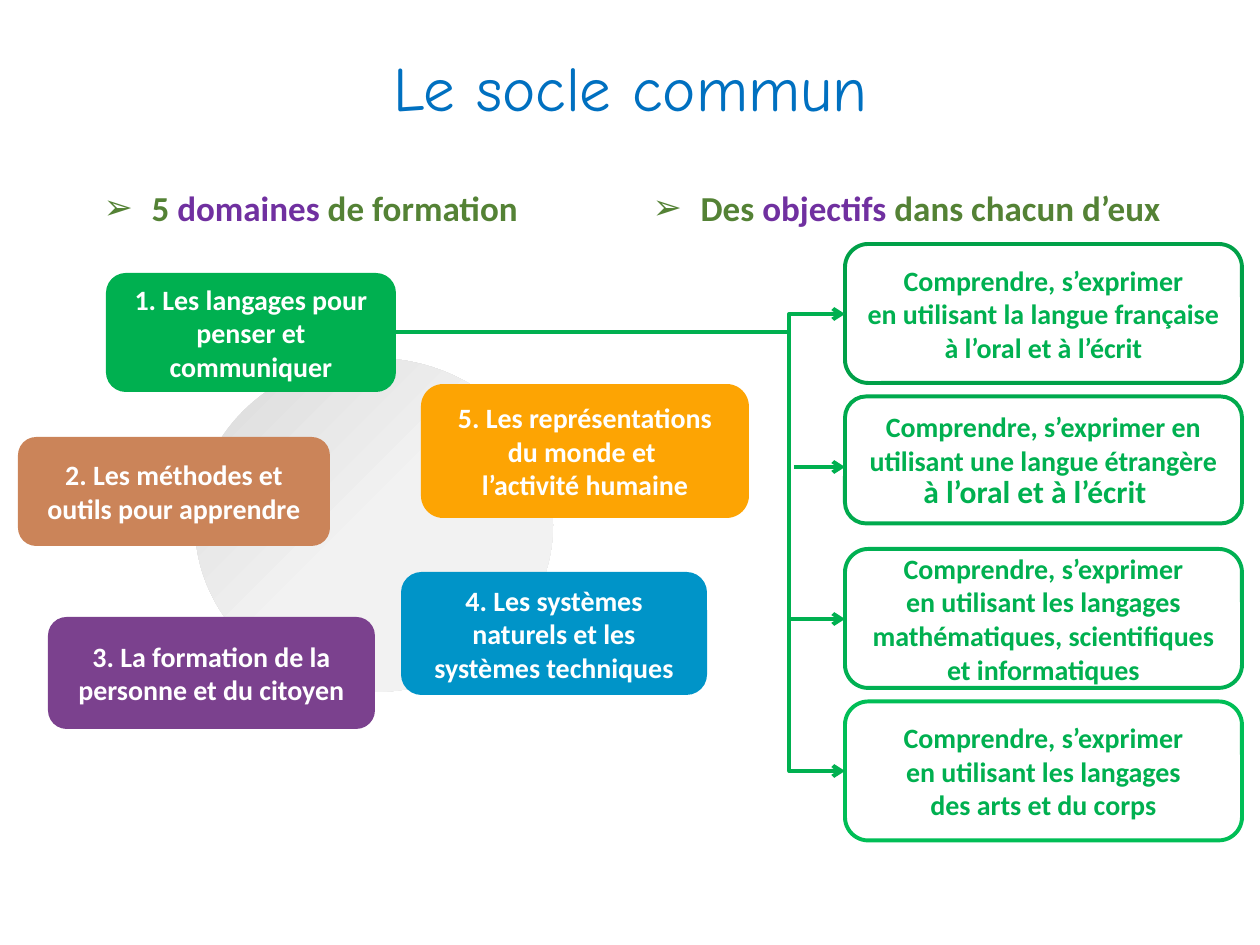
from lxml import etree
from pptx import Presentation
from pptx.dml.color import RGBColor
from pptx.enum.shapes import MSO_CONNECTOR, MSO_SHAPE
from pptx.enum.text import MSO_ANCHOR, PP_ALIGN
from pptx.oxml import parse_xml
from pptx.oxml.ns import nsdecls, qn
from pptx.util import Emu, Pt

OVAL, ROUNDED = MSO_SHAPE.OVAL, MSO_SHAPE.ROUNDED_RECTANGLE
STRAIGHT, ELBOW = MSO_CONNECTOR.STRAIGHT, MSO_CONNECTOR.ELBOW
CENTER, MIDDLE, TOP = PP_ALIGN.CENTER, MSO_ANCHOR.MIDDLE, MSO_ANCHOR.TOP

PX_PER_INCH = 126
GREEN, OLIVE, PURPLE, WHITE = "00B050", "548235", "7030A0", "FFFFFF"

# Left, top, width, height, fill, text
DOMAINS = [
    (401, 572, 306, 123, "0094C8", "4. Les systèmes naturels et les systèmes techniques"),
    (48, 617, 327, 112, "7B418E", "3. La formation de la personne et du citoyen"),
    (18, 437, 312, 109, "CB8459", "2. Les méthodes et outils pour apprendre"),
    (421, 384, 328, 134, "FDA403", "5. Les représentations du monde et \nl’activité humaine"),
    (106, 273, 290, 119, GREEN, "1. Les langages pour penser et communiquer"),
]

# Height, line colour, bottom inset, text
GOALS = [
    (139, "00A048", 6, "Comprendre, s’exprimer\nen utilisant la langue française à l’oral et à l’écrit"),
    (127, "00AA4D", 40, "Comprendre, s’exprimer en utilisant une langue étrangère"),
    (139, "00B052", 6, "Comprendre, s’exprimer\nen utilisant les langages mathématiques, scientifiques "
                       "et informatiques"),
    (139, "00BE56", 6, "Comprendre, s’exprimer\nen utilisant les langages\ndes arts et du corps"),
]
GOAL_LEFT, GOAL_TOP, GOAL_WIDTH, GOAL_PITCH = 845, 244, 397, 152.5

# Left, width, coloured runs
HEADINGS = [
    (91, 544, [("5 ", OLIVE), ("domaines", PURPLE), (" de formation", OLIVE)]),
    (640, 621, [("Des ", OLIVE), ("objectifs", PURPLE), (" dans chacun d’eux", OLIVE)]),
]


def px(n):
    return Emu(round(n * 914400 / PX_PER_INCH))


def rgb(value):
    return RGBColor.from_string(value)


def place(sp, left, top, width, height):
    sp.left, sp.top, sp.width, sp.height = px(left), px(top), px(width), px(height)


def add_run(p, text, size, color, bold=True, font="Calibri"):
    r = p.add_run()
    r.text = text
    r.font.name, r.font.size, r.font.bold = font, Pt(size), bold
    r.font.color.rgb = rgb(color)


def add_title(slide, text):
    sp = slide.shapes.title
    place(sp, 0, 0, 1261, 183)
    sp.text_frame.vertical_anchor = MIDDLE
    p = sp.text_frame.paragraphs[0]
    p.alignment, p.line_spacing = CENTER, 0.9
    add_run(p, text, 36, "0070C0", False, "Comic Neue")


def add_heading(sp, left, width, runs):
    place(sp, left, 180, width, 55)
    sp.text_frame.vertical_anchor = TOP
    p = sp.text_frame.paragraphs[0]
    p.space_before = Pt(0)
    pPr = p._p.get_or_add_pPr()
    pPr.set("marL", str(px(48)))
    pPr.set("indent", str(-px(48)))
    etree.SubElement(pPr, qn("a:buChar")).set("char", "➢")
    for text, color in runs:
        add_run(p, text, 20, color)


def add_disc(slide):
    sp = slide.shapes.add_shape(OVAL, px(195), px(358), px(358), px(334))
    sp.shadow.inherit = False
    sp.line.fill.background()
    sp.fill.gradient()
    stops = "".join(
        f'<a:gs pos="{pos}000"><a:srgbClr val="{color}"/></a:gs>'
        for pos, color in ((0, "F2F2F2"), (50, "F2F2F2"), (100, "D9D9D9")))
    radial = parse_xml(
        f'<a:gradFill {nsdecls("a")}><a:gsLst>{stops}</a:gsLst><a:path path="circle">'
        '<a:fillToRect l="100000" t="100000"/></a:path></a:gradFill>')
    spPr = sp._element.spPr
    spPr.replace(spPr.find(qn("a:gradFill")), radial)


def add_box(slide, left, top, width, height, text, color, fill=None, line=None):
    sp = slide.shapes.add_shape(ROUNDED, px(left), px(top), px(width), px(height))
    sp.shadow.inherit = False
    if fill:
        sp.fill.solid()
        sp.fill.fore_color.rgb = rgb(fill)
    else:
        sp.fill.background()
    if line:
        sp.line.color.rgb = rgb(line)
        sp.line.width = Pt(2.25)
    else:
        sp.line.fill.background()
    tf = sp.text_frame
    tf.word_wrap, tf.vertical_anchor = True, MIDDLE
    p = tf.paragraphs[0]
    p.alignment = CENTER
    for i, part in enumerate(text.split("\n")):
        if i:
            p.add_line_break()
        add_run(p, part, 16, color)
    return sp


def add_arrow(slide, kind, x1, y1, x2, y2, bend=None):
    cxn = slide.shapes.add_connector(kind, px(x1), px(y1), px(x2), px(y2))
    cxn.line.color.rgb = rgb(GREEN)
    cxn.line.width = Pt(2.25)
    spPr = cxn._element.spPr
    etree.SubElement(cxn.line._get_or_add_ln(), qn("a:tailEnd")).set("type", "arrow")
    etree.SubElement(spPr, qn("a:effectLst"))
    if bend:
        guide = etree.SubElement(spPr.find(qn("a:prstGeom")).find(qn("a:avLst")), qn("a:gd"))
        guide.set("name", "adj1")
        guide.set("fmla", f"val {round(bend * 100000)}")


def add_label(slide, left, top, width, height, text):
    tf = slide.shapes.add_textbox(px(left), px(top), px(width), px(height)).text_frame
    tf.word_wrap = False
    add_run(tf.paragraphs[0], text, 18, GREEN)


def main():
    prs = Presentation()
    prs.slide_width, prs.slide_height = px(1260), px(945)
    slide = prs.slides.add_slide(prs.slide_layouts[3])

    # Title and column headings
    add_title(slide, "Le socle commun")
    for idx, heading in enumerate(HEADINGS, 1):
        add_heading(slide.placeholders[idx], *heading)

    # Five domains around the disc
    add_disc(slide)
    for left, top, width, height, fill, text in DOMAINS:
        add_box(slide, left, top, width, height, text, WHITE, fill=fill)

    # Goals of the first domain
    for i, (height, line, inset, text) in enumerate(GOALS):
        sp = add_box(slide, GOAL_LEFT, GOAL_TOP + i * GOAL_PITCH, GOAL_WIDTH, height,
                     text, GREEN, line=line)
        sp.text_frame.margin_bottom = px(inset)
    add_label(slide, 911, 466, 251, 50, "à l’oral et à l’écrit")

    # Arrows from the first domain to its goals
    for y in (314, 619, 771):
        add_arrow(slide, ELBOW, 396, 332, GOAL_LEFT, y, bend=0.876)
    add_arrow(slide, STRAIGHT, 794, 467, GOAL_LEFT, 467)

    prs.save("out.pptx")


if __name__ == "__main__":
    main()
